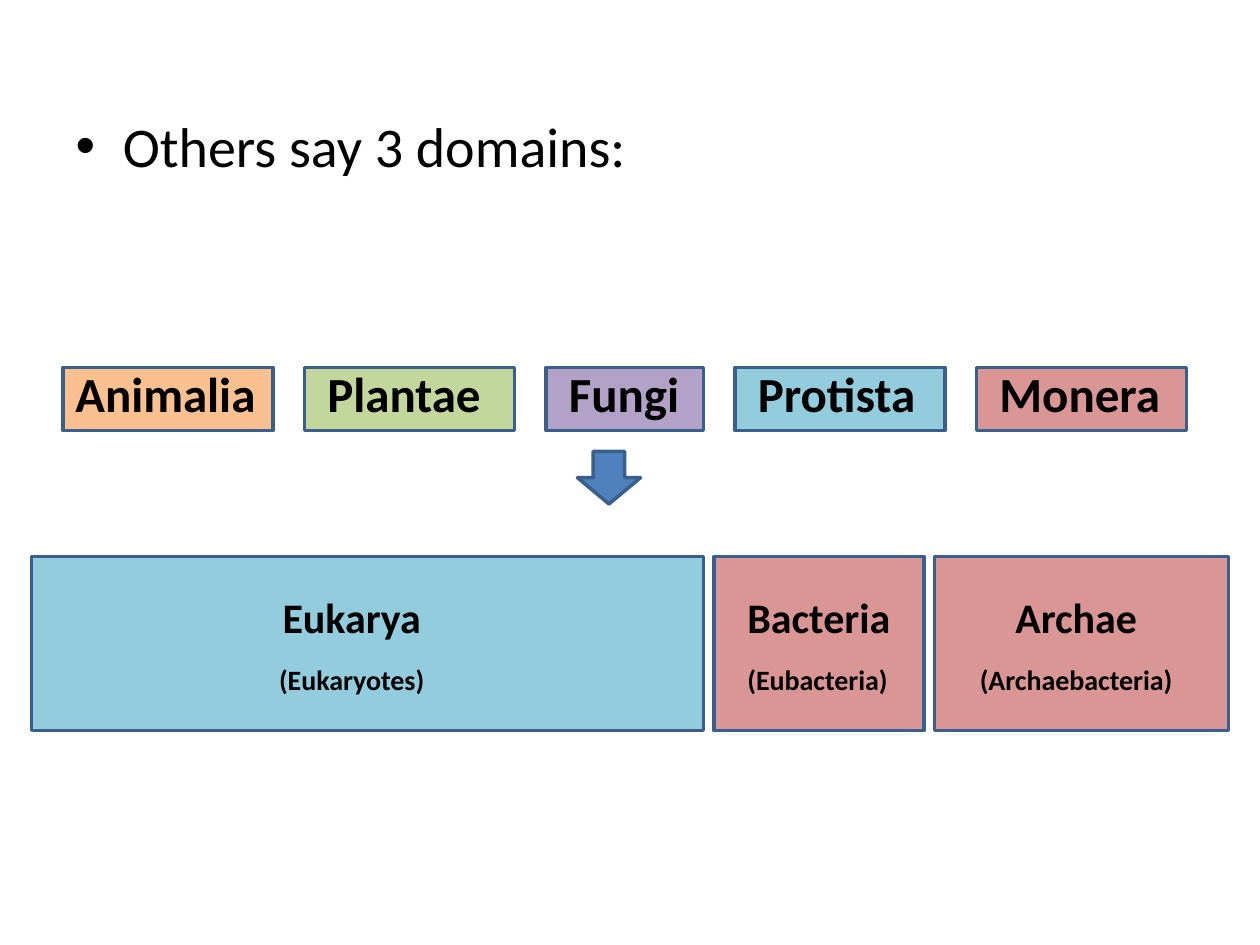
from pptx import Presentation
from pptx.dml.color import RGBColor
from pptx.enum import shapes, text
from pptx.util import Emu, Pt

PX = 7620  # 120 px to the inch

BLACK = RGBColor(0x00, 0x00, 0x00)
OUTLINE = RGBColor(0x3A, 0x5F, 0x8C)
BLUE = RGBColor(0x4F, 0x81, 0xBD)
ORANGE = RGBColor(0xFA, 0xC0, 0x90)
GREEN = RGBColor(0xC3, 0xD6, 0x9B)
PURPLE = RGBColor(0xB3, 0xA2, 0xC7)
AQUA = RGBColor(0x93, 0xCD, 0xDD)
RED = RGBColor(0xD9, 0x96, 0x94)

LEFT, CENTER = text.PP_ALIGN.LEFT, text.PP_ALIGN.CENTER
HEADING = "Others say 3 domains:"

# lines, fill, box width, label offset, label width, alignment
KINGDOMS = [
    (["Animalia"], ORANGE, 200, 0, 200, LEFT),
    (["Plantae"], GREEN, 200, 10, 172, LEFT),
    (["Fungi"], PURPLE, 150, 10, 131, LEFT),
    (["Protista"], AQUA, 200, 10, 176, LEFT),
    (["Monera"], RED, 200, 10, 179, LEFT),
]
DOMAINS = [
    (["Eukarya", "(Eukaryotes)"], AQUA, 640, 170, 270, CENTER),
    (["Bacteria", "(Eubacteria)"], RED, 200, 20, 162, LEFT),
    (["Archae", "(Archaebacteria)"], RED, 280, 30, 210, CENTER),
]


def px(*lengths):
    return [Emu(n * PX) for n in lengths]


def add_block(parent, kind, left, top, width, height, fill):
    sp = parent.add_shape(kind, *px(left, top, width, height))
    sp.shadow.inherit = False
    sp.fill.solid()
    sp.fill.fore_color.rgb = fill
    sp.line.color.rgb = OUTLINE
    sp.line.width = Pt(2)


def add_label(parent, lines, sizes, align, *box):
    tf = parent.add_textbox(*px(*box)).text_frame
    tf.word_wrap = False
    tf.text = "\n".join(lines)
    for i, (p, size) in enumerate(zip(tf.paragraphs, sizes)):
        p.alignment = align
        p.space_before = Pt(12 if i else 0)
        p.font.name = "Calibri"
        p.font.size = Pt(size)
        p.font.bold = True
        p.font.color.rgb = BLACK


def add_row(slide, items, left, gap, top, height, label_top, label_height, sizes):
    """Group a row of boxes, evenly spaced, with a label over each."""
    row = slide.shapes.add_group_shape().shapes
    for lines, fill, width, offset, label_width, align in items:
        add_block(row, shapes.MSO_SHAPE.RECTANGLE, left, top, width, height, fill)
        add_label(row, lines, sizes, align,
                  left + offset, label_top, label_width, label_height)
        left += width + gap


def main():
    prs = Presentation()
    prs.slide_width, prs.slide_height = px(1200, 900)
    slide = prs.slides.add_slide(prs.slide_layouts[1])
    title = slide.shapes.title.element
    title.getparent().remove(title)

    body = slide.placeholders[1]
    body.left, body.top, body.width, body.height = px(60, 100, 1080, 704)
    body.text_frame.text = HEADING
    font = body.text_frame.paragraphs[0].font
    font.name, font.size = "Calibri", Pt(32)
    font.color.rgb = BLACK

    add_row(slide, DOMAINS, 30, 10, 530, 166, 557, 113, (24, 16))
    add_row(slide, KINGDOMS, 60, 30, 350, 60, 340, 68, (28,))
    add_block(slide.shapes, shapes.MSO_SHAPE.DOWN_ARROW, 550, 430, 60, 50, BLUE)

    prs.save("out.pptx")


if __name__ == "__main__":
    main()
